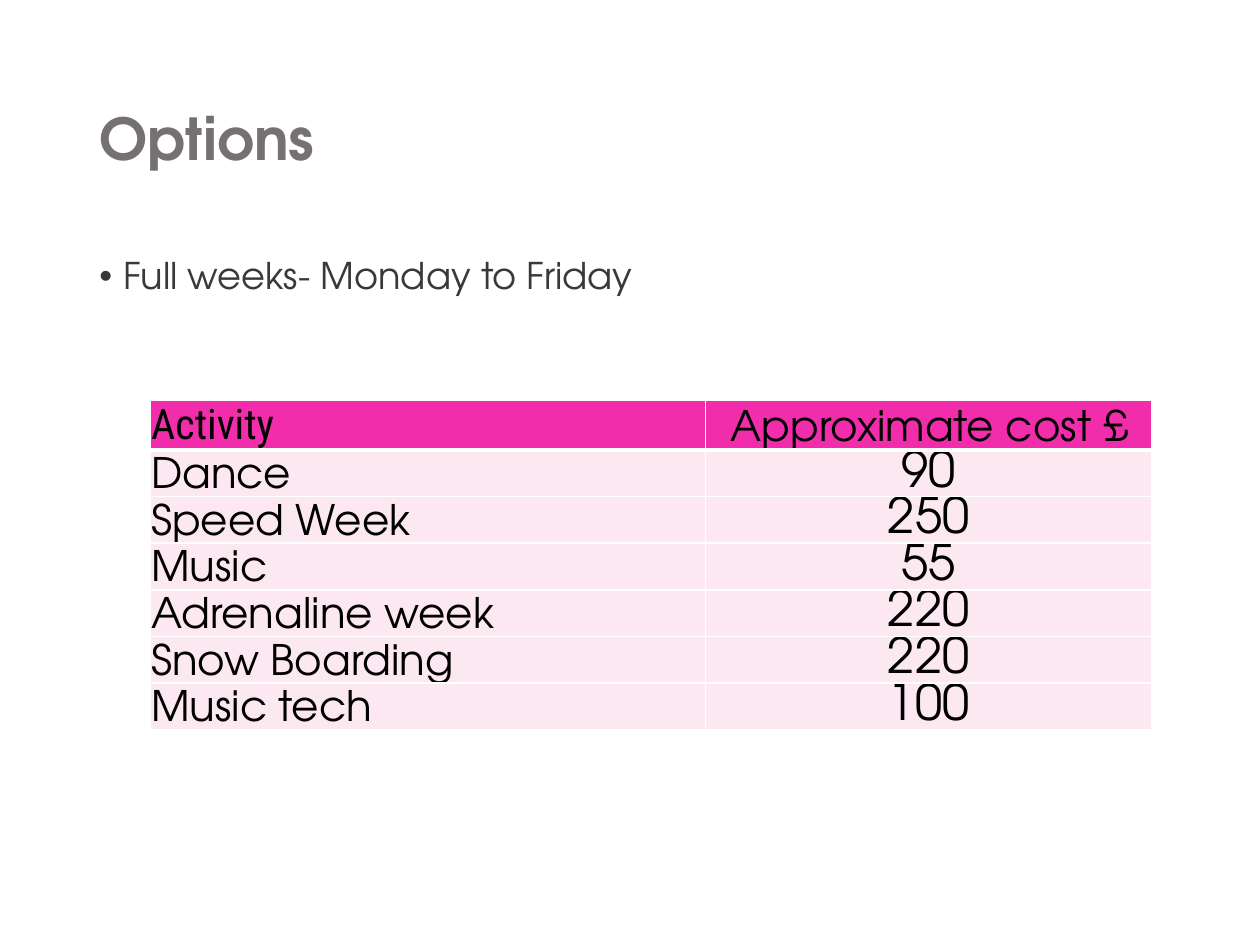
from dataclasses import dataclass

import lxml.etree
import pptx
import pptx.dml.color
import pptx.enum.text
import pptx.oxml.ns
import pptx.util
from pptx.util import Inches

Anchor = pptx.enum.text.MSO_ANCHOR
Align = pptx.enum.text.PP_ALIGN
qn = pptx.oxml.ns.qn


@dataclass(frozen=True)
class Theme:
    font: str = "TeX Gyre Adventor"
    condensed: str = "Roboto Condensed"
    title: str = "767171"
    body: str = "3B3838"
    ink: str = "000000"
    header: str = "F12DAB"
    row: str = "FCE8F1"
    border: str = "FFFFFF"
    title_size: float = 33
    body_size: float = 21
    label_size: float = 24
    cost_size: float = 28
    header_leading: float = 27.4
    row_leading: float = 25.9


@dataclass(frozen=True)
class Activity:
    name: str
    cost: str


THEME = Theme()
ACTIVITIES = [
    Activity("Dance", "90"),
    Activity("Speed Week", "250"),
    Activity("Music", "55"),
    Activity("Adrenaline week", "220"),
    Activity("Snow Boarding", "220"),
    Activity("Music tech", "100"),
]
COLUMN_WIDTHS = (4.41, 3.54)
ROW_HEIGHT = 0.2


def apply(target, values: dict) -> None:
    for name, value in values.items():
        setattr(target, name, value)


def write(paragraph, text: str, size: float, color: str,
          font: str = THEME.font, bold: bool = False) -> None:
    run = paragraph.add_run()
    run.text = text
    apply(run.font, {"name": font, "size": pptx.util.Pt(size), "bold": bold})
    run.font.color.rgb = pptx.dml.color.RGBColor.from_string(color)


def add_text_box(slide, top: float, height: float, anchor):
    """Add a wrapped box on the slide margins and return its first paragraph."""
    shape = slide.shapes.add_textbox(
        Inches(0.69), Inches(top), Inches(8.62), Inches(height))
    apply(shape.text_frame, {"word_wrap": True, "vertical_anchor": anchor})
    paragraph = shape.text_frame.paragraphs[0]
    paragraph.line_spacing = 0.9
    return paragraph


def add_bullet(paragraph, indent: float) -> None:
    properties = paragraph._p.get_or_add_pPr()
    properties.set("marL", str(Inches(indent)))
    properties.set("indent", str(-Inches(indent)))
    lxml.etree.SubElement(properties, qn("a:buFont")).set("typeface", "Arial")
    lxml.etree.SubElement(properties, qn("a:buChar")).set("char", "•")


def set_borders(cell, widths: dict) -> None:
    properties = cell._tc.get_or_add_tcPr()
    for position, (side, width) in enumerate(widths.items()):
        line = lxml.etree.Element(qn(f"a:{side}"), w=str(pptx.util.Pt(width)))
        fill = lxml.etree.SubElement(line, qn("a:solidFill"))
        lxml.etree.SubElement(fill, qn("a:srgbClr")).set("val", THEME.border)
        properties.insert(position, line)


def fill_cell(cell, text: str, size: float, fill: str, alignment,
              font: str, leading: float, top: float, bottom: float) -> None:
    apply(cell, {
        "margin_left": Inches(0.01), "margin_top": Inches(0.01),
        "margin_right": Inches(0.01), "margin_bottom": 0,
        "vertical_anchor": Anchor.BOTTOM,
    })
    cell.fill.solid()
    cell.fill.fore_color.rgb = pptx.dml.color.RGBColor.from_string(fill)
    set_borders(cell, {"lnL": 1, "lnR": 1, "lnT": top, "lnB": bottom})
    paragraph = cell.text_frame.paragraphs[0]
    apply(paragraph, {"alignment": alignment,
                      "line_spacing": pptx.util.Pt(leading)})
    write(paragraph, text, size, THEME.ink, font)


def add_cost_table(slide, activities: list[Activity]) -> None:
    rows = [Activity("Activity", "Approximate cost £"), *activities]
    frame = slide.shapes.add_table(
        len(rows), len(COLUMN_WIDTHS), Inches(1.19), Inches(3.18),
        Inches(sum(COLUMN_WIDTHS)), Inches(ROW_HEIGHT * len(rows)))
    table = frame.table
    for column, width in zip(table.columns, COLUMN_WIDTHS):
        column.width = Inches(width)
    for index, activity in enumerate(rows):
        table.rows[index].height = Inches(ROW_HEIGHT)
        header = index == 0
        fill = THEME.header if header else THEME.row
        leading = THEME.header_leading if header else THEME.row_leading
        top = 3 if index == 1 else 1
        bottom = 3 if header else 1
        fill_cell(table.cell(index, 0), activity.name, THEME.label_size, fill,
                  Align.LEFT, THEME.condensed if header else THEME.font,
                  leading, top, bottom)
        fill_cell(table.cell(index, 1), activity.cost,
                  THEME.label_size if header else THEME.cost_size, fill,
                  Align.CENTER, THEME.font, leading, top, bottom)
    # The frame is taller than the minimum row heights
    frame.height = Inches(3.26)


def main() -> None:
    presentation = pptx.Presentation()
    apply(presentation, {"slide_width": Inches(10), "slide_height": Inches(7.5)})
    slide = presentation.slides.add_slide(presentation.slide_layouts[6])

    # Title
    title = add_text_box(slide, 0.4, 1.45, Anchor.MIDDLE)
    write(title, "Options", THEME.title_size, THEME.title, bold=True)

    # Introductory bullet
    bullet = add_text_box(slide, 2, 4.76, Anchor.TOP)
    add_bullet(bullet, 0.19)
    write(bullet, "Full weeks- Monday to Friday", THEME.body_size, THEME.body)

    # Activities and costs
    add_cost_table(slide, ACTIVITIES)

    presentation.save("out.pptx")


if __name__ == "__main__":
    main()
